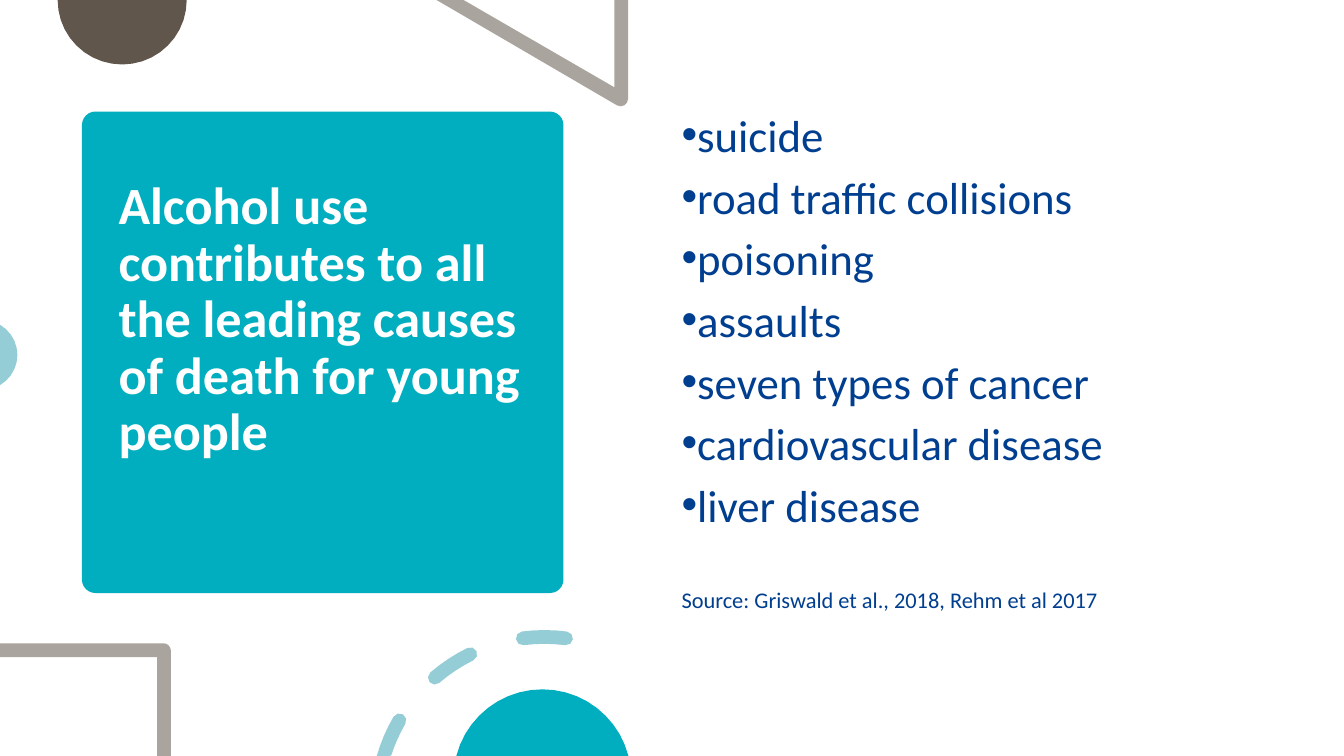
from math import cos, radians, sin

from pptx import Presentation
from pptx.dml.color import RGBColor
from pptx.enum.shapes import MSO_SHAPE as Preset
from pptx.enum.text import MSO_ANCHOR as Anchor, MSO_AUTO_SIZE as AutoSize, PP_ALIGN as Align
from pptx.oxml.ns import qn
from pptx.util import Cm, Pt

COLORS = {"teal": "00AEC0", "pale": "94CDD5", "brown": "61564B",
          "grey": "A9A49D", "navy": "003E90", "white": "FFFFFF"}
WIDTH, HEIGHT = 25.4, 14.29

prs = Presentation()
prs.slide_width, prs.slide_height = Cm(WIDTH), Cm(HEIGHT)
slide = prs.slides.add_slide(prs.slide_layouts[1])
shapes = slide.shapes


def arc(x, y, radius, start, end, steps=4):
    """Points along a circle in cm; angles in degrees run clockwise from the right."""
    angles = [radians(start + (end - start) * i / steps) for i in range(steps + 1)]
    return [(x + radius * cos(a), y + radius * sin(a)) for a in angles]


def paint(shape, color):
    shape.shadow.inherit = False
    shape.fill.solid()
    shape.fill.fore_color.rgb = RGBColor.from_string(COLORS[color])
    shape.line.fill.background()


# Dashed ring: the first dash is cut by the slide edge, the others have round ends
ring_x, ring_y, ring_r, half = 10.29, 15.21, 3.17, 0.13
dashes = [arc(ring_x, ring_y, ring_r + half, 196.2, 210.2)
          + arc(*arc(ring_x, ring_y, ring_r, 210.2, 210.2)[0], half, 210.2, 390.2)
          + arc(ring_x, ring_y, ring_r - half, 210.2, 197.7)]
for start, end in [(229.2, 243.8), (262.6, 277.4)]:
    middle = arc(ring_x, ring_y, ring_r, start, end)
    dashes.append(arc(ring_x, ring_y, ring_r + half, start, end)
                  + arc(*middle[-1], half, end, end + 180)
                  + arc(ring_x, ring_y, ring_r - half, end, start)
                  + arc(*middle[0], half, start + 180, start + 360))

triangle = ([(11.61, 0), (11.61, 1.65), (8.76, 0), (8.25, 0)]
            + arc(11.73, 1.87, 0.14, 120, 0) + [(11.87, 0)])
frame = ([(0, 12.16)] + arc(3.09, 12.3, 0.14, 270, 360)
         + [(3.23, HEIGHT), (2.97, HEIGHT), (2.97, 12.42), (0, 12.42)])

decorations = [
    ("brown", [arc(2.31, 0, 1.22, 0, 180, 20)]),
    ("grey", [triangle]),
    ("pale", [arc(-0.33, 6.71, 0.66, -60, 60, 10)]),
    ("grey", [frame]),
    ("pale", dashes),
    ("teal", [arc(10.25, 14.71, 1.68, 194.5, 345.5, 20)]),
]
for color, outlines in decorations:
    contours = [[(Cm(x), Cm(y)) for x, y in outline] for outline in outlines]
    builder = shapes.build_freeform(*contours[0][0])
    for number, contour in enumerate(contours):
        if number:
            builder.move_to(*contour[0])
        builder.add_line_segments(contour[1:], close=True)
    paint(builder.convert_to_shape(), color)

# Card behind the title
card = shapes.add_shape(Preset.ROUNDED_RECTANGLE, Cm(1.55), Cm(2.11), Cm(9.1), Cm(9.1))
card.adjustments[0] = 0.028
paint(card, "teal")
shapes._spTree.insert(2, card._element)

# Title and list
heading = "Alcohol use contributes to all the leading causes of death for young people"
causes = ["suicide", "road traffic collisions", "poisoning", "assaults",
          "seven types of cancer", "cardiovascular disease", "liver disease"]
citation = "Source: Griswald et al., 2018, Rehm et al 2017"

title, body = shapes.title, slide.placeholders[1]
title.text_frame.text = heading
body.text_frame.text = "\n".join(causes + [citation])
layout = [
    (title, (1.99, 2.31, 8.2, 8.69), Anchor.MIDDLE, 1.31),
    (body, (12.63, 2.1, 10.95, 10.19), Anchor.TOP, 0.13),
]
for holder, box, anchor, bottom in layout:
    holder.left, holder.top, holder.width, holder.height = map(Cm, box)
    settings = {"word_wrap": True, "auto_size": AutoSize.NONE, "vertical_anchor": anchor,
                "margin_left": Cm(0.25), "margin_right": Cm(0.25),
                "margin_top": Cm(0.13), "margin_bottom": Cm(bottom)}
    for name, value in settings.items():
        setattr(holder.text_frame, name, value)

styles = [(title.text_frame.paragraphs[0], 28, True, "white", 0.9, 0, None)]
for number, line in enumerate(body.text_frame.paragraphs):
    if number < len(causes):
        styles.append((line, 24, False, "navy", 0.8, 10 if number else 0, "•"))
    else:
        styles.append((line, 12, False, "navy", 0.8, 32, None))

for line, size, bold, color, spacing, before, bullet in styles:
    properties = line._p.get_or_add_pPr()
    properties.set("marL", "0")
    properties.set("indent", "0")
    mark = properties.makeelement(qn("a:buChar" if bullet else "a:buNone"), {})
    if bullet:
        mark.set("char", bullet)
    properties.append(mark)
    for name, value in {"alignment": Align.LEFT, "line_spacing": spacing,
                        "space_before": Pt(before), "space_after": Pt(0)}.items():
        setattr(line, name, value)
    font = line.runs[0].font
    for name, value in {"name": "Calibri", "size": Pt(size), "bold": bold}.items():
        setattr(font, name, value)
    font.color.rgb = RGBColor.from_string(COLORS[color])

prs.save("out.pptx")
